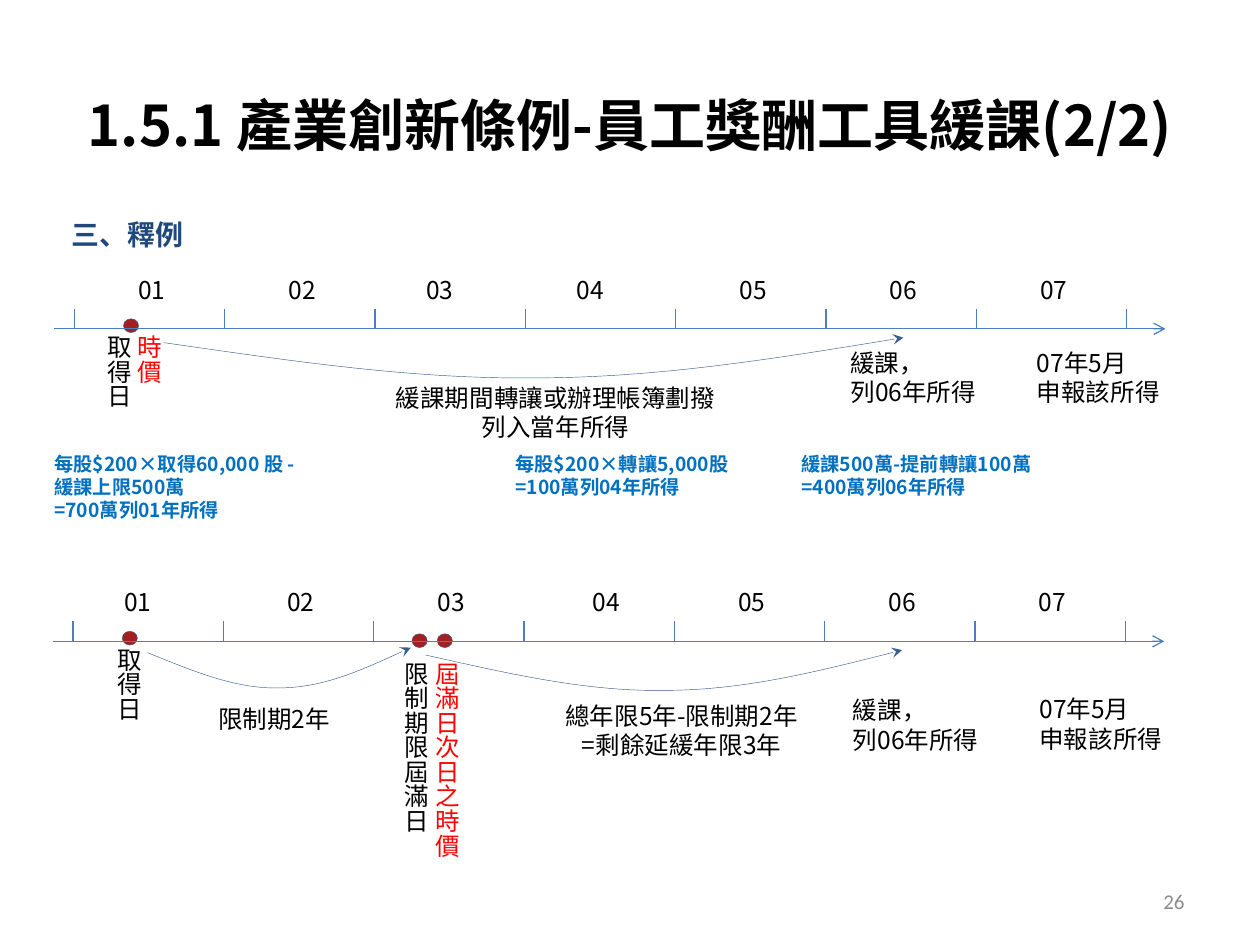
from dataclasses import dataclass

from lxml.etree import SubElement
from pptx import Presentation
from pptx.dml.color import RGBColor as RGB
from pptx.enum.shapes import MSO_CONNECTOR as CONN, MSO_SHAPE as SHAPE
from pptx.enum.text import MSO_ANCHOR as ANCHOR, PP_ALIGN as ALIGN
from pptx.oxml.ns import qn
from pptx.util import Inches, Pt


@dataclass(frozen=True)
class Theme:
    font: str = "Noto Sans CJK SC"
    number_font: str = "Calibri"
    black: str = "000000"
    red: str = "FF0000"
    navy: str = "1F497D"
    blue: str = "0070C0"
    gray: str = "8C8C8C"
    axis: str = "4B7EBC"
    curve: str = "3A5F8C"
    dot: str = "A32020"
    title: int = 32
    heading: int = 16
    body: int = 14
    note: int = 11
    number: int = 12


T = Theme()


def write(tf, text, size=T.body, color=T.black, bold=False, font=T.font,
          align=ALIGN.LEFT, anchor=ANCHOR.TOP, inset=0, vertical=False):
    tf.word_wrap = True
    tf.vertical_anchor = anchor
    tf.margin_left = tf.margin_right = Inches(inset)
    tf.margin_top = tf.margin_bottom = Inches(inset / 2)
    if vertical:
        tf._txBody.bodyPr.set("vert", "eaVert")
    for i, line in enumerate(text.split("\n")):
        p = tf.paragraphs[0] if i == 0 else tf.add_paragraph()
        p.alignment = align
        p.space_before = Pt(0)
        r = p.add_run()
        r.text = line
        r.font.size = Pt(size)
        r.font.bold = bold
        r.font.name = font
        r.font.color.rgb = RGB.from_string(color)
        SubElement(r._r.get_or_add_rPr(), qn("a:ea")).set("typeface", font)


def stroke(shape, color, width, arrow=None):
    shape.line.color.rgb = RGB.from_string(color)
    shape.line.width = Pt(width)
    if arrow:
        SubElement(shape.line._get_or_add_ln(), qn("a:tailEnd")).set("type", arrow)
    SubElement(shape._element.spPr, qn("a:effectLst"))


prs = Presentation()
prs.slide_width, prs.slide_height = Inches(10), Inches(7.5)
s = prs.slides.add_slide(prs.slide_layouts[5])

title = s.shapes.title
title.left, title.top = Inches(0), Inches(0.36)
title.width, title.height = Inches(10), Inches(1.25)
write(title.text_frame, "1.5.1 產業創新條例-員工獎酬工具緩課(2/2)", size=T.title,
      bold=True, align=ALIGN.CENTER, anchor=ANCHOR.MIDDLE, inset=0.1)

for x, y in [(0.98, 2.53), (0.97, 5.01), (3.27, 5.03), (3.47, 5.03)]:
    dot = s.shapes.add_shape(SHAPE.OVAL, Inches(x), Inches(y), Inches(0.12), Inches(0.11))
    dot.fill.solid()
    dot.fill.fore_color.rgb = RGB.from_string(T.dot)
    stroke(dot, T.curve, 0.25)

step = 1.193
timelines = [
    (0.43, 2.61, 2.18, [0, 0, -0.1, -0.1, 0, 0, 0]),
    (0.42, 5.09, 4.66, [-0.1, 0, 0, 0.04, 0, 0, 0]),
]
for left, axis_y, label_y, shifts in timelines:
    axis = s.shapes.add_connector(CONN.STRAIGHT, Inches(left), Inches(axis_y),
                                  Inches(left + 8.82), Inches(axis_y))
    stroke(axis, T.axis, 0.75, "arrow")
    for i in range(8):
        x = Inches(left + 0.16 + i * step)
        tick = s.shapes.add_connector(CONN.STRAIGHT, x, Inches(axis_y - 0.16), x, Inches(axis_y))
        stroke(tick, T.axis, 0.75)
    for i, shift in enumerate(shifts):
        label = s.shapes.add_textbox(Inches(left + 0.58 + i * step + shift), Inches(label_y),
                                     Inches(0.39), Inches(0.31))
        write(label.text_frame, f"{i + 1:02d}", align=ALIGN.CENTER)

curve_drops = [0.04, 0.18, 0.33, 0.32, 0.32, 0.16, 0]
for x, y, width in [(1.3, 2.68, 5.87), (3.38, 5.16, 3.78), (1.17, 5.14, 2.09)]:
    points = [(Inches(x + width * i / 6), Inches(y + drop)) for i, drop in enumerate(curve_drops)]
    fb = s.shapes.build_freeform(*points[0])
    fb.add_line_segments(points[1:], close=False)
    curve = fb.convert_to_shape()
    outline = curve._element.find(".//" + qn("a:path"))
    segments = outline.findall(qn("a:lnTo"))
    for start in (0, 3):
        bezier = SubElement(outline, qn("a:cubicBezTo"))
        for segment in segments[start:start + 3]:
            bezier.append(segment[0])
            outline.remove(segment)
    curve.fill.background()
    stroke(curve, T.curve, 0.25, "stealth")

vertical = dict(vertical=True)
center = dict(align=ALIGN.CENTER)
note = dict(size=T.note, color=T.blue, bold=True)
texts = [
    (0.57, 1.73, 8.98, 5.43, "三、釋例", dict(size=T.heading, color=T.navy, bold=True)),
    (0.67, 2.66, 0.39, 1.6, "取得日", vertical),
    (0.91, 2.66, 0.39, 1.6, "時價", dict(vertical, color=T.red)),
    (2.96, 3.04, 2.9, 0.49, "緩課期間轉讓或辦理帳簿劃撥\n列入當年所得", center),
    (6.75, 2.76, 1.2, 0.5, "緩課，\n列06年所得", {}),
    (8.23, 2.76, 1.2, 0.5, "07年5月\n申報該所得", {}),
    (0.43, 3.59, 1.95, 0.31, "每股$200×取得60,000 股 -緩課上限500萬\n=700萬列01年所得", note),
    (4.09, 3.59, 1.86, 0.32, "每股$200×轉讓5,000股\n=100萬列04年所得", note),
    (6.36, 3.59, 2.58, 0.31, "緩課500萬-提前轉讓100萬\n=400萬列06年所得", note),
    (0.75, 5.14, 0.39, 1.28, "取得日", vertical),
    (3.03, 5.25, 0.39, 1.4, "限制期限屆滿日", vertical),
    (3.27, 5.25, 0.39, 1.57, "屆滿日次日之時價", dict(vertical, color=T.red, align=ALIGN.CENTER)),
    (1.69, 5.59, 0.97, 0.31, "限制期2年", center),
    (4.13, 5.56, 2.56, 0.49, "總年限5年-限制期2年\n=剩餘延緩年限3年", center),
    (6.77, 5.52, 1.2, 0.5, "緩課，\n列06年所得", {}),
    (8.25, 5.51, 1.2, 0.5, "07年5月\n申報該所得", {}),
    (7.17, 6.95, 2.33, 0.4, "26", dict(size=T.number, color=T.gray, font=T.number_font,
                                       align=ALIGN.RIGHT, anchor=ANCHOR.MIDDLE, inset=0.1)),
]
for x, y, w, h, text, style in texts:
    box = s.shapes.add_textbox(Inches(x), Inches(y), Inches(w), Inches(h))
    write(box.text_frame, text, **style)

prs.save("out.pptx")
